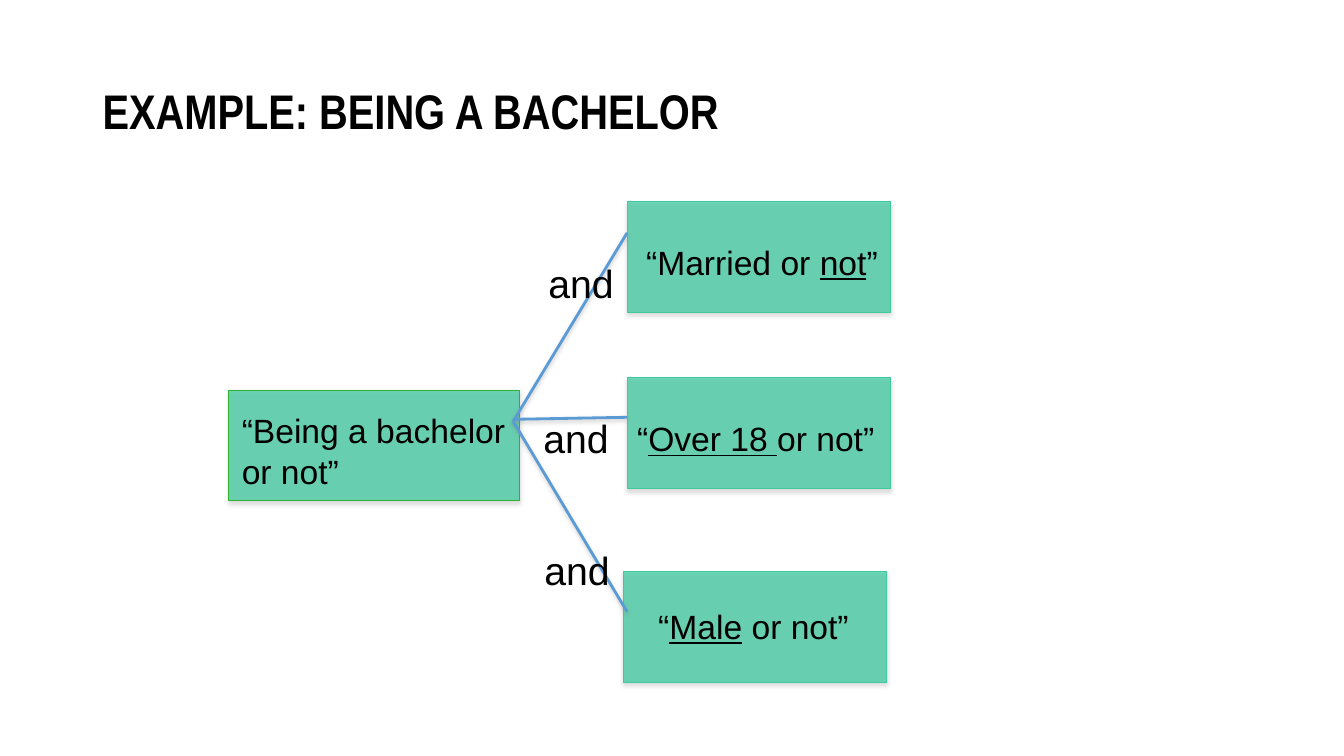
from lxml import etree
from pptx import Presentation
from pptx.dml.color import RGBColor
from pptx.enum.shapes import MSO_CONNECTOR, MSO_SHAPE
from pptx.enum.text import MSO_ANCHOR, MSO_AUTO_SIZE
from pptx.oxml.ns import qn
from pptx.util import Inches, Pt

RECTANGLE = MSO_SHAPE.RECTANGLE
STRAIGHT = MSO_CONNECTOR.STRAIGHT
MIDDLE = MSO_ANCHOR.MIDDLE
GROW = MSO_AUTO_SIZE.SHAPE_TO_FIT_TEXT

BLACK = RGBColor(0x00, 0x00, 0x00)
MINT = RGBColor(0x3E, 0xCA, 0x9F)
GREEN = RGBColor(0x30, 0xB1, 0x2F)
BLUE = RGBColor(0x5B, 0x9B, 0xD5)
GRAY = RGBColor(0x80, 0x80, 0x80)


class DiagramSlide:
    """Draws the boxes, links and labels of a concept diagram in one style."""

    def __init__(self, slide):
        self.slide = slide

    def set_alpha(self, color, percent):
        etree.SubElement(color, qn("a:alpha"), val=str(percent * 1000))

    def add_shadow(self, shape, distance, percent):
        effects = etree.SubElement(shape._element.spPr, qn("a:effectLst"))
        shadow = etree.SubElement(
            effects, qn("a:outerShdw"), blurRad=str(Pt(3.1)),
            dist=str(Pt(distance)), dir="5400000", rotWithShape="0")
        color = etree.SubElement(shadow, qn("a:srgbClr"), val=str(GRAY))
        self.set_alpha(color, percent)

    def box(self, left, top, width, outline=MINT):
        shape = self.slide.shapes.add_shape(
            RECTANGLE, Inches(left), Inches(top), Inches(width), Inches(1.1))
        shape.fill.solid()
        shape.fill.fore_color.rgb = MINT
        self.set_alpha(shape._element.spPr.find(qn("a:solidFill"))[0], 74)
        shape.line.color.rgb = outline
        shape.line.width = Pt(0.75)
        self.add_shadow(shape, 1.8, 35)

    def link(self, start, end):
        connector = self.slide.shapes.add_connector(
            STRAIGHT, *(Inches(value) for value in start + end))
        connector.line.color.rgb = BLUE
        connector.line.width = Pt(2)
        self.add_shadow(connector, 1.6, 38)

    def text(self, left, top, width, height, lines, size=24, wrap=False):
        """Write lines in which underscores enclose underlined words."""
        shape = self.slide.shapes.add_textbox(
            Inches(left), Inches(top), Inches(width), Inches(height))
        frame = shape.text_frame
        frame.word_wrap = wrap
        frame.auto_size = GROW
        for index, line in enumerate(lines):
            paragraph = frame.add_paragraph() if index else frame.paragraphs[0]
            paragraph.font.name = "Arial"
            paragraph.font.size = Pt(size)
            paragraph.font.color.rgb = BLACK
            for position, part in enumerate(line.split("_")):
                run = paragraph.add_run()
                run.text = part
                if position % 2:
                    run.font.underline = True
        return frame

    def title(self, words):
        frame = self.text(0.92, 0.4, 11.5, 1.45, [words], 34.7, True)
        frame.auto_size = MSO_AUTO_SIZE.NONE
        frame.vertical_anchor = MIDDLE
        paragraph = frame.paragraphs[0]
        paragraph.line_spacing = 0.9
        paragraph.font.name = "Arial Narrow"
        paragraph.font.bold = True


def main():
    presentation = Presentation()
    presentation.slide_width = Inches(13.33)
    presentation.slide_height = Inches(7.5)
    diagram = DiagramSlide(
        presentation.slides.add_slide(presentation.slide_layouts[6]))

    diagram.title("EXAMPLE: BEING A BACHELOR")
    diagram.box(2.27, 3.87, 2.88, GREEN)
    for left, top in ((6.22, 2), (6.22, 3.75), (6.18, 5.67)):
        diagram.box(left, top, 2.61)

    diagram.text(2.3, 4.02, 2.86, 0.91,
                 ["“Being a bachelor", "or not”"], wrap=True)
    for left, top, width, condition in (
            (6.31, 2.35, 2.52, "“Married or _not_”"),
            (6.22, 4.1, 2.58, "“_Over 18 _or not”"),
            (6.43, 5.96, 2.11, "“_Male_ or not”")):
        diagram.text(left, top, width, 0.5, [condition])

    for condition_y, concept_y in ((2.31, 4.18), (4.14, 4.16), (6.07, 4.18)):
        diagram.link((6.22, condition_y), (5.09, concept_y))
    for left, top in ((5.34, 2.52), (5.29, 4.06), (5.3, 5.37)):
        diagram.text(left, top, 0.86, 0.57, ["and"], 28)

    presentation.save("out.pptx")


if __name__ == "__main__":
    main()
